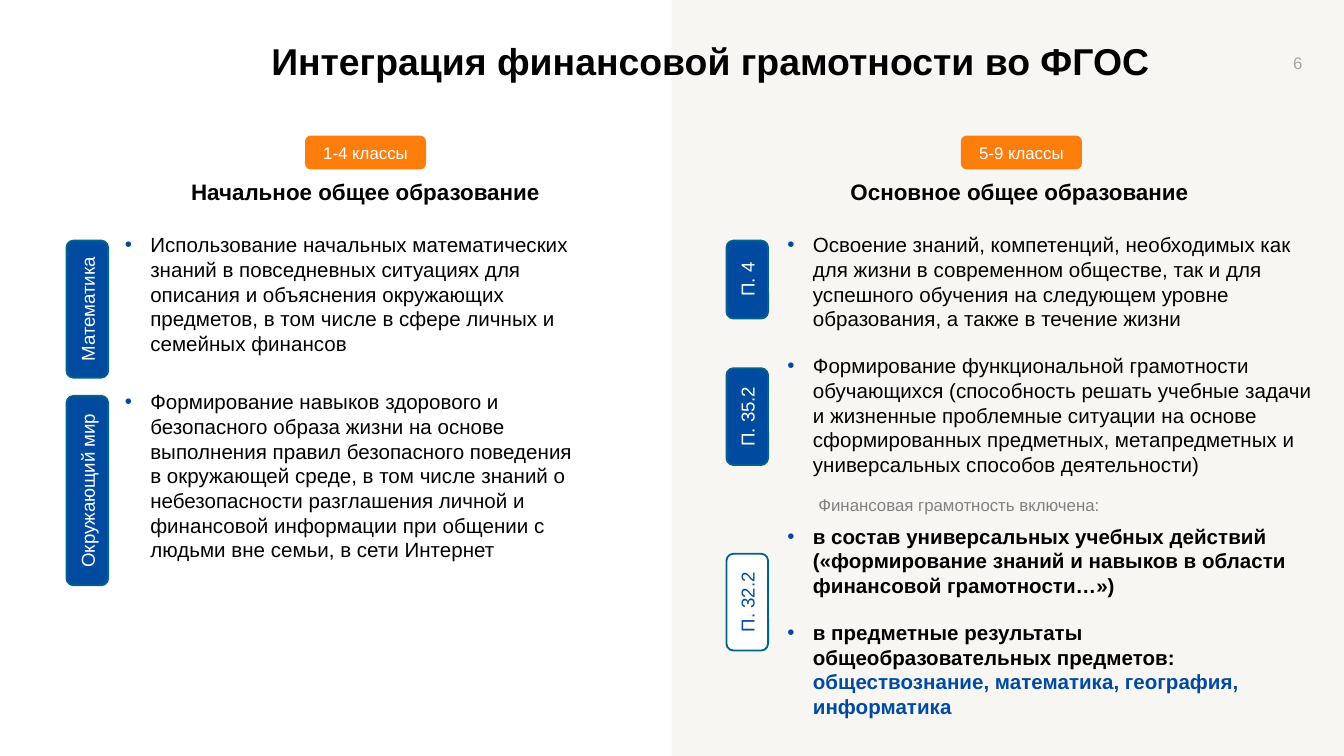
from pptx import Presentation
from pptx.util import Inches, Pt
from pptx.dml.color import RGBColor
from pptx.enum.shapes import MSO_SHAPE
from pptx.enum.text import MSO_ANCHOR, PP_ALIGN
from lxml.etree import SubElement
from pptx.oxml.ns import qn


def color(code):
    return RGBColor.from_string(code)


class Deck:
    font = "Arial"
    black, white, blue = "000000", "FFFFFF", "004AA0"
    edge, orange, cream = "00648A", "FD7E0D", "F8F6F3"

    def __init__(self, slide):
        self.slide = slide

    def style(self, para, size, tint, bold=False, align=PP_ALIGN.LEFT):
        para.alignment = align
        font = para.font
        font.name, font.size, font.bold = self.font, Pt(size), bold
        font.color.rgb = color(tint)

    def frame(self, box, wrap):
        frame = self.slide.shapes.add_textbox(*map(Inches, box)).text_frame
        frame.word_wrap = wrap
        return frame

    def label(self, text, box, size, tint, bold=False,
              align=PP_ALIGN.LEFT, anchor=MSO_ANCHOR.TOP):
        frame = self.frame(box, False)
        frame.vertical_anchor = anchor
        para = frame.paragraphs[0]
        para.text = text
        self.style(para, size, tint, bold, align)
        return para

    def shape(self, kind, box, fill, line=None):
        item = self.slide.shapes.add_shape(kind, *map(Inches, box))
        item.shadow.inherit = False
        item.fill.solid()
        item.fill.fore_color.rgb = color(fill)
        if line:
            item.line.color.rgb = color(line)
            item.line.width = Pt(1)
        else:
            item.line.fill.background()
        return item

    def badge(self, text, box, size, fill, tint, line=None):
        item = self.shape(MSO_SHAPE.ROUNDED_RECTANGLE, box, fill, line)
        frame = item.text_frame
        frame.word_wrap = False
        frame.vertical_anchor = MSO_ANCHOR.MIDDLE
        para = frame.paragraphs[0]
        para.text = text
        self.style(para, size, tint, align=PP_ALIGN.CENTER)
        return item

    def tab(self, text, x, y, size, fill=blue, tint=white):
        box = (x - size / 2, y - 0.31 / 2, size, 0.31)
        self.badge(text, box, 10, fill, tint, self.edge).rotation = 270

    def bullets(self, box, items):
        frame = self.frame(box, True)
        for num, (gap, bold, runs) in enumerate(items):
            para = frame.add_paragraph() if num else frame.paragraphs[0]
            props = para._p.get_or_add_pPr()
            props.set("marL", str(Inches(0.19)))
            props.set("indent", str(-Inches(0.19)))
            tone = SubElement(props, qn("a:buClr"))
            SubElement(tone, qn("a:srgbClr"), val=self.blue)
            SubElement(props, qn("a:buFont"), typeface=self.font)
            SubElement(props, qn("a:buChar"), char="•")
            para.space_before = Pt(gap)
            self.style(para, 11, self.black, bold)
            for text, tint in runs:
                run = para.add_run()
                run.text = text
                run.font.color.rgb = color(tint)


def main():
    deck = Presentation()
    deck.slide_width = Inches(10)
    deck.slide_height = deck.slide_width * 9 // 16
    page = Deck(deck.slides.add_slide(deck.slide_layouts[6]))
    black, blue = page.black, page.blue

    page.shape(MSO_SHAPE.RECTANGLE, (5, 0, 5, 10 * 9 / 16), page.cream)
    title = page.label("Интеграция финансовой грамотности во ФГОС",
                       (1.92, 0.24, 7.18, 0.47), 20, black, True,
                       anchor=MSO_ANCHOR.MIDDLE)
    title.line_spacing = 0.9
    page.label("6", (9.31, 0.32, 0.48, 0.3), 9, "A6A6A6",
               align=PP_ALIGN.RIGHT, anchor=MSO_ANCHOR.MIDDLE)

    heads = [
        ("1-4 классы", 2.27, "Начальное общее образование",
         1.31, 2.82, PP_ALIGN.CENTER),
        ("5-9 классы", 7.15, "Основное общее образование",
         6.23, 2.74, PP_ALIGN.LEFT),
    ]
    for grade, x, name, left, width, align in heads:
        page.badge(grade, (x, 1.01, 0.9, 0.25), 9, page.orange, page.white)
        page.label(name, (left, 1.28, width, 0.3), 12, black, True, align)

    page.bullets((0.83, 1.68, 3.61, 2.57), [
        (0, False, [("Использование начальных математических знаний в "
                     "повседневных ситуациях для описания и объяснения "
                     "окружающих предметов, в том числе в сфере личных и "
                     "семейных финансов", black)]),
        (18, False, [("Формирование навыков здорового и безопасного образа "
                      "жизни на основе выполнения правил безопасного "
                      "поведения в окружающей среде, в том числе знаний о "
                      "небезопасности разглашения личной и финансовой "
                      "информации при общении с людьми вне семьи, в сети "
                      "Интернет", black)]),
    ])
    page.bullets((5.76, 1.68, 4.11, 3.75), [
        (0, False, [("Освоение знаний, компетенций, необходимых как для "
                     "жизни в современном обществе, так и для успешного "
                     "обучения на следующем уровне образования, а также в "
                     "течение жизни", black)]),
        (12, False, [("Формирование функциональной грамотности обучающихся "
                      "(способность решать учебные задачи и жизненные "
                      "проблемные ситуации на основе сформированных "
                      "предметных, метапредметных и универсальных способов "
                      "деятельности)", black)]),
        (25.2, True, [("в состав универсальных учебных действий "
                       "(«формирование знаний и навыков в области "
                       "финансовой грамотности…»)", black)]),
        (12, True, [("в предметные результаты общеобразовательных "
                     "предметов: ", black),
                    ("обществознание, математика, география, "
                     "информатика", blue)]),
    ])
    page.label("Финансовая грамотность включена:",
               (5.99, 3.63, 2.32, 0.25), 9, "808080")

    left, right = 0.65, 5.56
    page.tab("Математика", left, 2.3, 1.02)
    page.tab("Окружающий мир", left, 3.65, 1.41)
    page.tab("П. 4", right, 2.08, 0.58)
    page.tab("П. 35.2", right, 3.1, 0.72)
    page.tab("П. 32.2", right, 4.48, 0.72, page.white, blue)

    deck.save("out.pptx")


if __name__ == "__main__":
    main()
